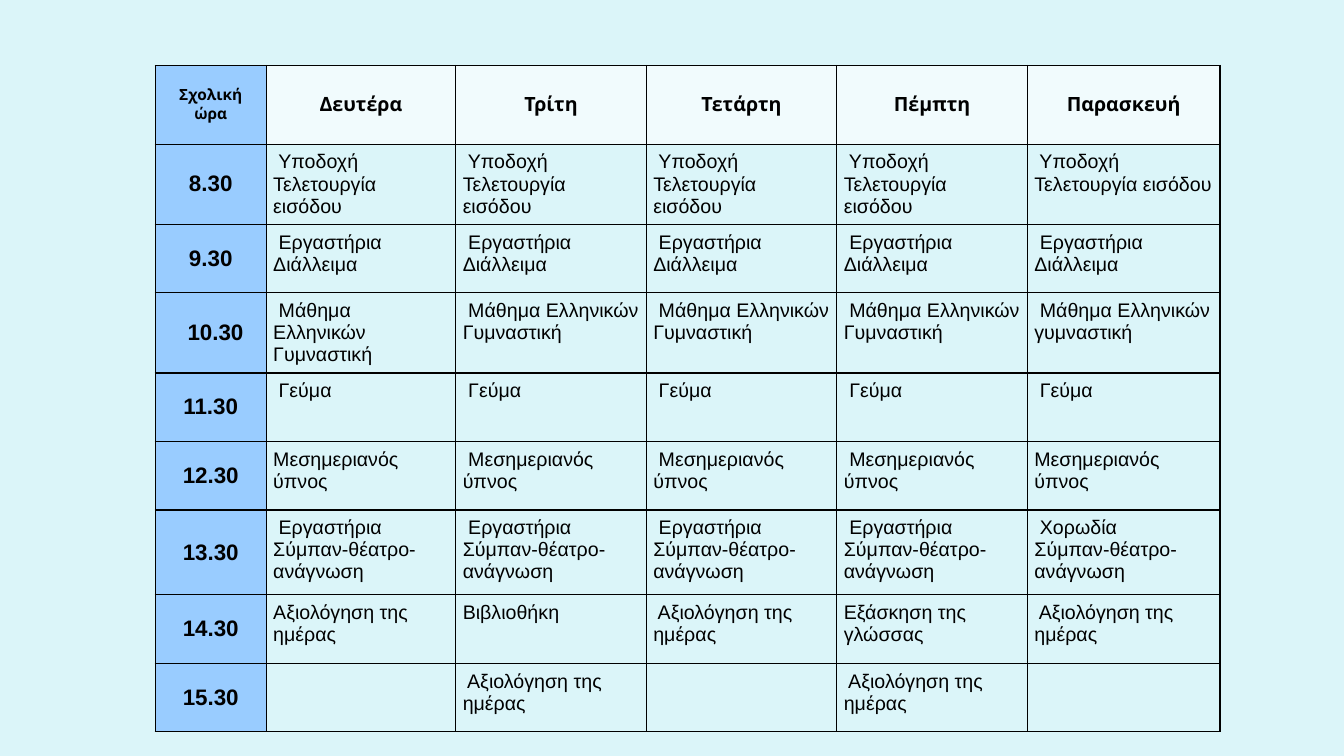
from dataclasses import dataclass

from lxml.etree import SubElement
from pptx import Presentation
from pptx.dml.color import RGBColor
from pptx.enum.text import MSO_ANCHOR, PP_ALIGN
from pptx.oxml.ns import qn
from pptx.table import _Cell
from pptx.util import Inches, Pt

BLACK = "000000"
PAGE = "DBF5F9"
HOUR_FILL = "99CCFF"
DAY_FILL = "F1FBFD"
MARGIN = 0.07
HOUR_INDENT = 0.25


@dataclass(frozen=True)
class CellStyle:
    font: str
    size: int
    bold: bool = True
    fill: str | None = None
    align: PP_ALIGN = PP_ALIGN.CENTER
    anchor: MSO_ANCHOR = MSO_ANCHOR.MIDDLE
    indent: float = 0


@dataclass(frozen=True)
class Lesson:
    hour: str
    days: list[str]
    height: float = 0.68


CORNER = CellStyle("Cabin", 11, fill=HOUR_FILL)
DAY = CellStyle("Cabin", 14, fill=DAY_FILL)
HOUR = CellStyle("Arial", 16, fill=HOUR_FILL)
INDENTED_HOUR = CellStyle("Arial", 16, fill=HOUR_FILL, align=PP_ALIGN.LEFT, indent=HOUR_INDENT)
ACTIVITY = CellStyle("Arial", 14, bold=False, align=PP_ALIGN.LEFT, anchor=MSO_ANCHOR.TOP)

WEEKDAYS = ["Δευτέρα", "Τρίτη", "Τετάρτη", "Πέμπτη", "Παρασκευή"]
COLUMN_WIDTHS = [1.1, 1.88, 1.89, 1.89, 1.89, 1.91]
HEADER_HEIGHT = 0.78

NAP = "Μεσημεριανός ύπνος"
REVIEW = "Αξιολόγηση της ημέρας"
LESSONS = [
    Lesson("8.30", [" Υποδοχή\nΤελετουργία εισόδου"] * 5),
    Lesson("9.30", [" Εργαστήρια\nΔιάλλειμα"] * 5),
    Lesson("10.30", [" Μάθημα Ελληνικών\nΓυμναστική"] * 4 + [" Μάθημα Ελληνικών\nγυμναστική"]),
    Lesson("11.30", [" Γεύμα"] * 5),
    Lesson("12.30", [NAP] + [f" {NAP}"] * 3 + [f"{NAP} "]),
    Lesson(
        "13.30",
        [" Εργαστήρια\nΣύμπαν-θέατρο-ανάγνωση"] * 4 + [" Χορωδία\nΣύμπαν-θέατρο-ανάγνωση"],
        height=0.84,
    ),
    Lesson("14.30", [REVIEW, "Βιβλιοθήκη", f" {REVIEW}", "Εξάσκηση της γλώσσας", f" {REVIEW}"]),
    Lesson("15.30", ["", f" {REVIEW}", "", f" {REVIEW}", ""]),
]


def rgb(value: str) -> RGBColor:
    return RGBColor.from_string(value)


def add_borders(cell: _Cell) -> None:
    properties = cell._tc.get_or_add_tcPr()
    for position, side in enumerate(("lnL", "lnR", "lnT", "lnB")):
        border = SubElement(properties, qn(f"a:{side}"), w=str(Pt(1)))
        SubElement(SubElement(border, qn("a:solidFill")), qn("a:srgbClr"), val=BLACK)
        properties.insert(position, border)


def fill_cell(cell: _Cell, text: str, style: CellStyle) -> None:
    cell_format = {
        "vertical_anchor": style.anchor,
        "margin_left": Inches(MARGIN + style.indent),
        "margin_right": Inches(MARGIN),
        "margin_top": Inches(MARGIN),
        "margin_bottom": Inches(MARGIN),
    }
    for name, value in cell_format.items():
        setattr(cell, name, value)
    if style.fill:
        cell.fill.solid()
        cell.fill.fore_color.rgb = rgb(style.fill)
    else:
        cell.fill.background()
    add_borders(cell)

    font_format = {"name": style.font, "size": Pt(style.size), "bold": style.bold}
    cell.text_frame.text = text
    for paragraph in cell.text_frame.paragraphs:
        paragraph.alignment = style.align
        for part in (paragraph, *paragraph.runs):
            for name, value in font_format.items():
                setattr(part.font, name, value)
            part.font.color.rgb = rgb(BLACK)


def main() -> None:
    presentation = Presentation()
    presentation.slide_width = Inches(13.33)
    presentation.slide_height = Inches(7.5)
    slide = presentation.slides.add_slide(presentation.slide_layouts[6])
    slide.background.fill.solid()
    slide.background.fill.fore_color.rgb = rgb(PAGE)

    row_heights = [HEADER_HEIGHT] + [lesson.height for lesson in LESSONS]
    timetable = slide.shapes.add_table(
        len(row_heights), len(COLUMN_WIDTHS),
        Inches(1.54), Inches(0.65), Inches(sum(COLUMN_WIDTHS)), Inches(sum(row_heights)),
    ).table
    timetable.first_row = False
    timetable.horz_banding = False
    for column, width in zip(timetable.columns, COLUMN_WIDTHS):
        column.width = Inches(width)
    for row, height in zip(timetable.rows, row_heights):
        row.height = Inches(height)

    fill_cell(timetable.cell(0, 0), "Σχολική ώρα", CORNER)
    for column, weekday in enumerate(WEEKDAYS, start=1):
        fill_cell(timetable.cell(0, column), weekday, DAY)
    for row, lesson in enumerate(LESSONS, start=1):
        hour_style = INDENTED_HOUR if lesson.hour == "10.30" else HOUR
        fill_cell(timetable.cell(row, 0), lesson.hour, hour_style)
        for column, activity in enumerate(lesson.days, start=1):
            fill_cell(timetable.cell(row, column), activity, ACTIVITY)

    presentation.save("out.pptx")


if __name__ == "__main__":
    main()
